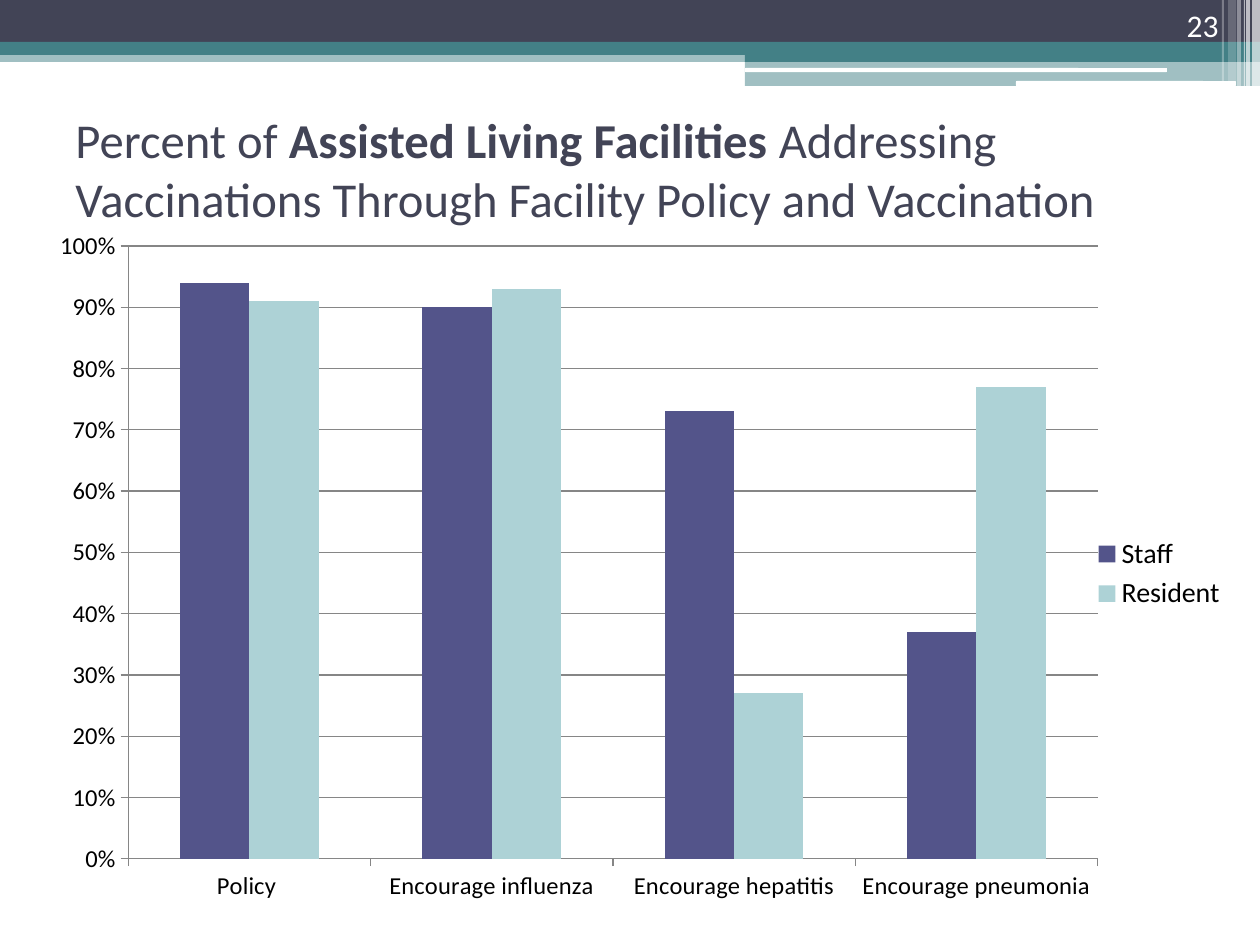
from dataclasses import dataclass

from lxml.etree import SubElement
from pptx import Presentation
from pptx.chart.data import CategoryChartData
from pptx.dml.color import RGBColor
from pptx.enum.chart import XL_CHART_TYPE as Chart, XL_LEGEND_POSITION as Legend, XL_TICK_MARK as Tick
from pptx.enum.shapes import MSO_SHAPE as Shape
from pptx.enum.text import MSO_ANCHOR as Anchor, PP_ALIGN as Align
from pptx.oxml import parse_xml
from pptx.oxml.ns import nsdecls, qn
from pptx.util import Emu, Pt

PX_PER_INCH = 126


@dataclass(frozen=True)
class Theme:
    font: str = "Calibri"
    navy: str = "424456"
    teal: str = "438086"
    white: str = "FFFFFF"
    black: str = "000000"
    grid: str = "868686"
    staff: str = "53548A"
    resident: str = "ADD2D6"
    title: float = 27.8
    number: float = 18
    axis: float = 14
    legend: float = 16


T = Theme()


@dataclass(frozen=True)
class Bar:
    x: int
    y: int
    w: int
    h: int
    color: str
    alpha: int = 100
    rounded: bool = False


@dataclass(frozen=True)
class Series:
    name: str
    values: tuple[float, ...]
    color: str


BARS = (
    Bar(0, 50, 1260, 12, T.teal, 50),
    Bar(0, 0, 1260, 43, T.navy),
    Bar(0, 42, 1260, 13, T.teal),
    Bar(745, 49, 515, 13, T.teal),
    Bar(745, 61, 515, 25, T.teal, 50),
    Bar(745, 68, 422, 4, T.white, rounded=True),
    Bar(1016, 81, 220, 5, T.white, rounded=True),
    Bar(1252, 0, 8, 86, T.white, 65),
    Bar(1246, 0, 4, 86, T.white, 65),
    Bar(1244, 0, 1, 86, T.white, 60),
    Bar(1237, 0, 4, 86, T.white, 40),
    Bar(1228, 0, 8, 81, T.white, 20),
    Bar(1222, 0, 2, 81, T.white, 30),
)

CATEGORIES = ("Policy ", "Encourage influenza", "Encourage hepatitis", "Encourage pneumonia")
SERIES = (
    Series("Staff", (0.94, 0.9, 0.73, 0.37), T.staff),
    Series("Resident", (0.91, 0.93, 0.27, 0.77), T.resident),
)
PLOT = {"x": 0.072, "y": 0.018, "w": 0.81, "h": 0.901}


def px(n: int) -> Emu:
    return Emu(round(n * 914400 / PX_PER_INCH))


def rgb(color: str) -> RGBColor:
    return RGBColor.from_string(color)


def set_font(font, size: float, color: str, bold: bool = False) -> None:
    font.name, font.size, font.bold = T.font, Pt(size), bold
    font.color.rgb = rgb(color)


def draw_bar(s, bar: Bar) -> None:
    kind = Shape.ROUNDED_RECTANGLE if bar.rounded else Shape.RECTANGLE
    sp = s.shapes.add_shape(kind, px(bar.x), px(bar.y), px(bar.w), px(bar.h))
    sp.shadow.inherit = False
    sp.line.fill.background()
    sp.fill.solid()
    sp.fill.fore_color.rgb = rgb(bar.color)
    if bar.alpha < 100:
        clr = sp.fill._xPr.find(qn("a:solidFill"))[0]
        SubElement(clr, qn("a:alpha")).set("val", str(bar.alpha * 1000))


def add_text(s, box: tuple[int, int, int, int], *runs: tuple[str, bool], size: float,
             color: str, align=Align.LEFT, anchor=Anchor.MIDDLE) -> None:
    tf = s.shapes.add_textbox(*map(px, box)).text_frame
    tf.word_wrap = True
    tf.vertical_anchor = anchor
    p = tf.paragraphs[0]
    p.alignment = align
    for text, bold in runs:
        r = p.add_run()
        r.text = text
        set_font(r.font, size, color, bold)


def style_axis(axis) -> None:
    axis.major_tick_mark, axis.minor_tick_mark = Tick.OUTSIDE, Tick.NONE
    axis.format.line.color.rgb = rgb(T.grid)
    set_font(axis.tick_labels.font, T.axis, T.black)


def set_plot_area(chart) -> None:
    area = chart._chartSpace.chart.plotArea
    for old in area.findall(qn("c:layout")):
        area.remove(old)
    sizes = "".join(f'<c:{k} val="{v}"/>' for k, v in PLOT.items())
    area.insert(0, parse_xml(
        f'<c:layout {nsdecls("c")}><c:manualLayout><c:layoutTarget val="inner"/>'
        f'<c:xMode val="edge"/><c:yMode val="edge"/>{sizes}</c:manualLayout></c:layout>'))


def draw_chart(s, box: tuple[int, int, int, int]) -> None:
    data = CategoryChartData(number_format="0%")
    data.categories = CATEGORIES
    for series in SERIES:
        data.add_series(series.name, series.values)
    chart = s.shapes.add_chart(Chart.COLUMN_CLUSTERED, *map(px, box), data).chart
    set_font(chart.font, T.axis, T.black)
    chart.has_title = False
    set_plot_area(chart)

    plot = chart.plots[0]
    plot.gap_width, plot.overlap, plot.vary_by_categories = 150, 0, False
    for drawn, series in zip(plot.series, SERIES):
        drawn.format.fill.solid()
        drawn.format.fill.fore_color.rgb = rgb(series.color)

    value_axis = chart.value_axis
    for axis in (chart.category_axis, value_axis):
        style_axis(axis)
    value_axis.minimum_scale, value_axis.maximum_scale, value_axis.major_unit = 0, 1, 0.1
    value_axis.tick_labels.number_format = "0%"
    value_axis.tick_labels.number_format_is_linked = False
    value_axis.major_gridlines.format.line.color.rgb = rgb(T.grid)

    chart.has_legend = True
    chart.legend.position = Legend.RIGHT
    chart.legend.include_in_layout = False
    set_font(chart.legend.font, T.legend, T.black)


def main() -> None:
    prs = Presentation()
    prs.slide_width, prs.slide_height = px(1260), px(945)
    s = prs.slides.add_slide(prs.slide_layouts[6])
    for bar in BARS:
        draw_bar(s, bar)
    add_text(s, (63, 95, 1134, 147), ("Percent of ", False), ("Assisted Living Facilities ", True),
             ("Addressing Vaccinations Through Facility Policy and Vaccination", False),
             size=T.title, color=T.navy)
    add_text(s, (1126, 0, 105, 50), ("23", False), size=T.number, color=T.white,
             align=Align.RIGHT, anchor=Anchor.BOTTOM)
    draw_chart(s, (42, 231, 1197, 683))
    prs.save("out.pptx")


if __name__ == "__main__":
    main()
